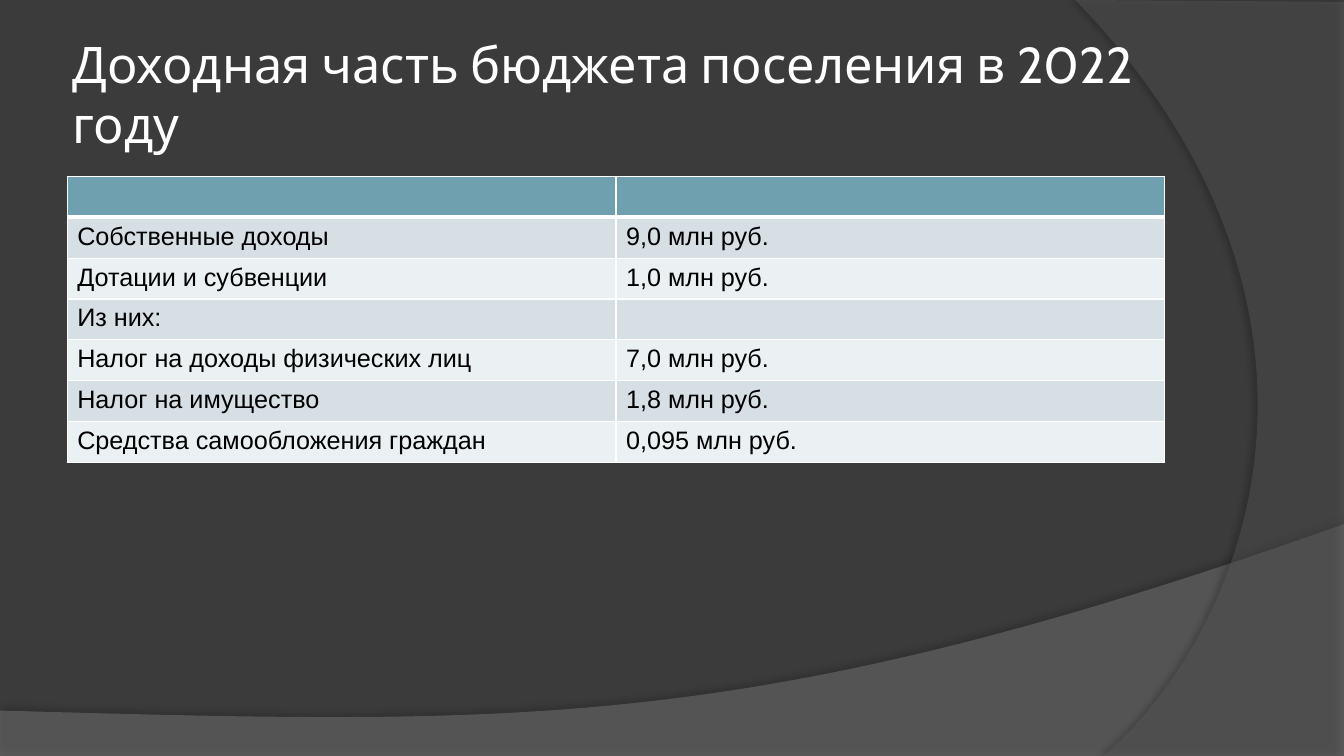
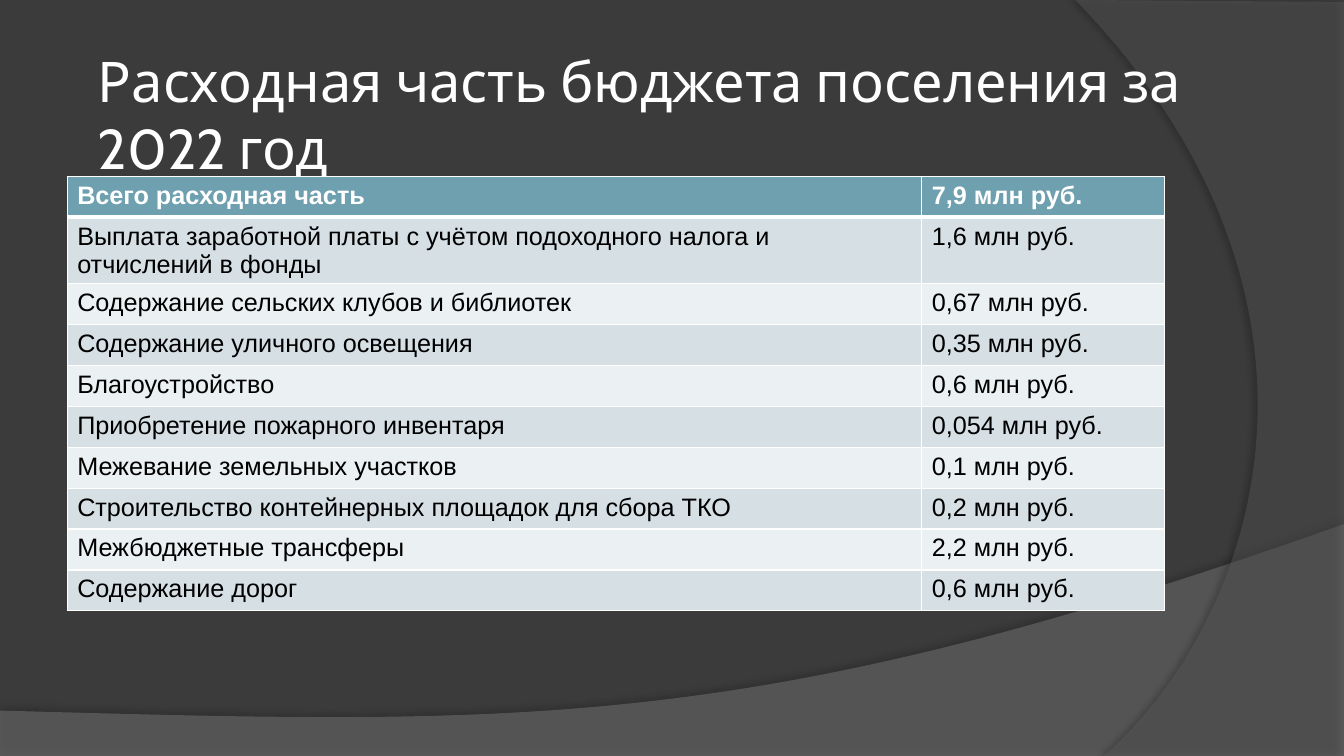
from lxml import etree
from pptx import Presentation
from pptx.dml.color import RGBColor
from pptx.enum import text
from pptx.oxml import ns
from pptx.util import Pt

WIDE, HIGH = 960, 540
INK = {
    "back": "3B3B3B", "wave": "7F7F7F", "arc": "5E5E5E", "shade": "000000",
    "white": "FFFFFF", "black": "000000",
    "head": "6EA0B0", "odd": "D5DFE4", "even": "EBF0F2",
}


def rgb(name):
    return RGBColor.from_string(INK[name])


def node(root, tag, **attrs):
    return etree.SubElement(root, ns.qn(tag), attrs)


def tint(root, name, alpha=100):
    color = node(root, "a:srgbClr", val=INK[name])
    node(color, "a:alpha", val=str(alpha * 1000))


def curve(a, b, c, d, steps=60):
    """Points of a cubic Bezier curve from a to d, without a itself."""
    for i in range(1, steps + 1):
        t = i / steps
        s = 1 - t
        yield tuple(s**3 * p + 3 * s * s * t * q + 3 * s * t * t * r + t**3 * e
                    for p, q, r, e in zip(a, b, c, d))


class Deck:
    def __init__(self):
        self.file = Presentation()
        self.file.slide_width, self.file.slide_height = Pt(WIDE), Pt(HIGH)
        self.slide = None

    def page(self):
        self.slide = self.file.slides.add_slide(self.file.slide_layouts[5])
        fill = self.slide.background.fill
        fill.solid()
        fill.fore_color.rgb = rgb("back")
        wave = curve((WIDE, 374.4), (536.4, 524.9), (375.1, 517.7), (0, 507.6))
        self.band([(0, HIGH), (WIDE, HIGH), (WIDE, 374.4), *wave],
                  "wave", 45, 35, 3.5, 270)
        arc = curve((788.4, HIGH), (897.1, 445.7), (977, 216), (768.2, 0))
        self.band([(WIDE, 1.4), (WIDE, HIGH), (788.4, HIGH), *arc],
                  "arc", 40, 45, 4, 180)

    def band(self, points, color, alpha, dark, dist, angle):
        spots = [(Pt(x), Pt(y)) for x, y in points]
        path = self.slide.shapes.build_freeform(*spots[0], scale=1.0)
        path.add_line_segments(spots[1:], close=True)
        shape = path.convert_to_shape()
        shape.line.fill.background()
        shape.fill.solid()
        shape.fill.fore_color.rgb = rgb(color)
        props = shape._element.spPr
        paint = props.find(ns.qn("a:solidFill")).find(ns.qn("a:srgbClr"))
        node(paint, "a:alpha", val=str(alpha * 1000))
        glow = node(node(props, "a:effectLst"), "a:outerShdw",
                    blurRad=str(Pt(4)), dist=str(Pt(dist)),
                    dir=str(angle * 60000), algn="ctr", rotWithShape="0")
        tint(glow, "shade", dark)

    def title(self, words, left, top, width, height, size):
        shape = self.slide.shapes.title
        shape.left, shape.top = Pt(left), Pt(top)
        shape.width, shape.height = Pt(width), Pt(height)
        frame = shape.text_frame
        frame.text = words
        frame.word_wrap = True
        frame.auto_size = text.MSO_AUTO_SIZE.NONE
        frame.vertical_anchor = text.MSO_ANCHOR.MIDDLE
        frame.margin_left = frame.margin_right = Pt(3.6)
        frame.margin_top = frame.margin_bottom = Pt(3.6)
        frame.paragraphs[0].alignment = text.PP_ALIGN.LEFT
        self.style(frame, "Cabin", size, "white")
        # The title stands in front of the bands.
        self.slide.shapes._spTree.append(shape._element)

    def style(self, frame, face, size, color, bold=False):
        for run in frame.paragraphs[0].runs:
            font = run.font
            font.name, font.size, font.bold = face, Pt(size), bold
            font.color.rgb = rgb(color)

    def edge(self, cell, row):
        """White cell borders, with a thick rule under the header."""
        props = cell._tc.get_or_add_tcPr()
        thick = {"L": 1, "R": 1, "T": 3 if row == 1 else 1,
                 "B": 3 if row == 0 else 1}
        for side, width in thick.items():
            line = node(props, "a:ln" + side, w=str(Pt(width)))
            tint(node(line, "a:solidFill"), "white")

    def table(self, rows, widths, tall=29.2):
        grid = self.slide.shapes.add_table(
            len(rows), len(widths), Pt(48), Pt(126),
            Pt(sum(widths)), Pt(tall * len(rows))).table
        for col, width in zip(grid.columns, widths):
            col.width = Pt(width)
        for r, row in enumerate(rows):
            grid.rows[r].height = Pt(tall)
            for c, words in enumerate(row):
                cell = grid.cell(r, c)
                self.edge(cell, r)
                cell.fill.solid()
                tone = "head" if r == 0 else "odd" if r % 2 else "even"
                cell.fill.fore_color.rgb = rgb(tone)
                cell.text_frame.text = words
                self.style(cell.text_frame, "Arial", 18,
                           "black" if r else "white", r == 0)


def main():
    deck = Deck()

    deck.page()
    deck.title("Доходная часть бюджета поселения в 2022 году",
               48, 21.6, 784, 90, 36)
    deck.table([
        ("", ""),
        ("Собственные доходы", "9,0 млн руб."),
        ("Дотации и субвенции", "1,0 млн руб."),
        ("Из них:", ""),
        ("Налог на доходы физических лиц", "7,0 млн руб."),
        ("Налог на имущество", "1,8 млн руб."),
        ("Средства самообложения граждан", "0,095 млн руб."),
    ], (392, 392))

    deck.page()
    deck.title("Расходная часть бюджета поселения за 2022 год",
               66.4, 28.8, 860, 104.4, 40)
    deck.table([
        ("Всего расходная часть", "7,9 млн руб."),
        ("Выплата заработной платы с учётом подоходного налога "
         "и отчислений в фонды", "1,6 млн руб."),
        ("Содержание сельских клубов и библиотек", "0,67 млн руб."),
        ("Содержание уличного освещения", "0,35 млн руб."),
        ("Благоустройство", "0,6 млн руб."),
        ("Приобретение пожарного инвентаря", "0,054 млн руб."),
        ("Межевание земельных участков", "0,1 млн руб."),
        ("Строительство контейнерных площадок для сбора ТКО",
         "0,2 млн руб."),
        ("Межбюджетные трансферы", "2,2 млн руб."),
        ("Содержание дорог", "0,6 млн руб."),
    ], (610.5, 173.5))

    deck.file.save("out.pptx")


if __name__ == "__main__":
    main()
